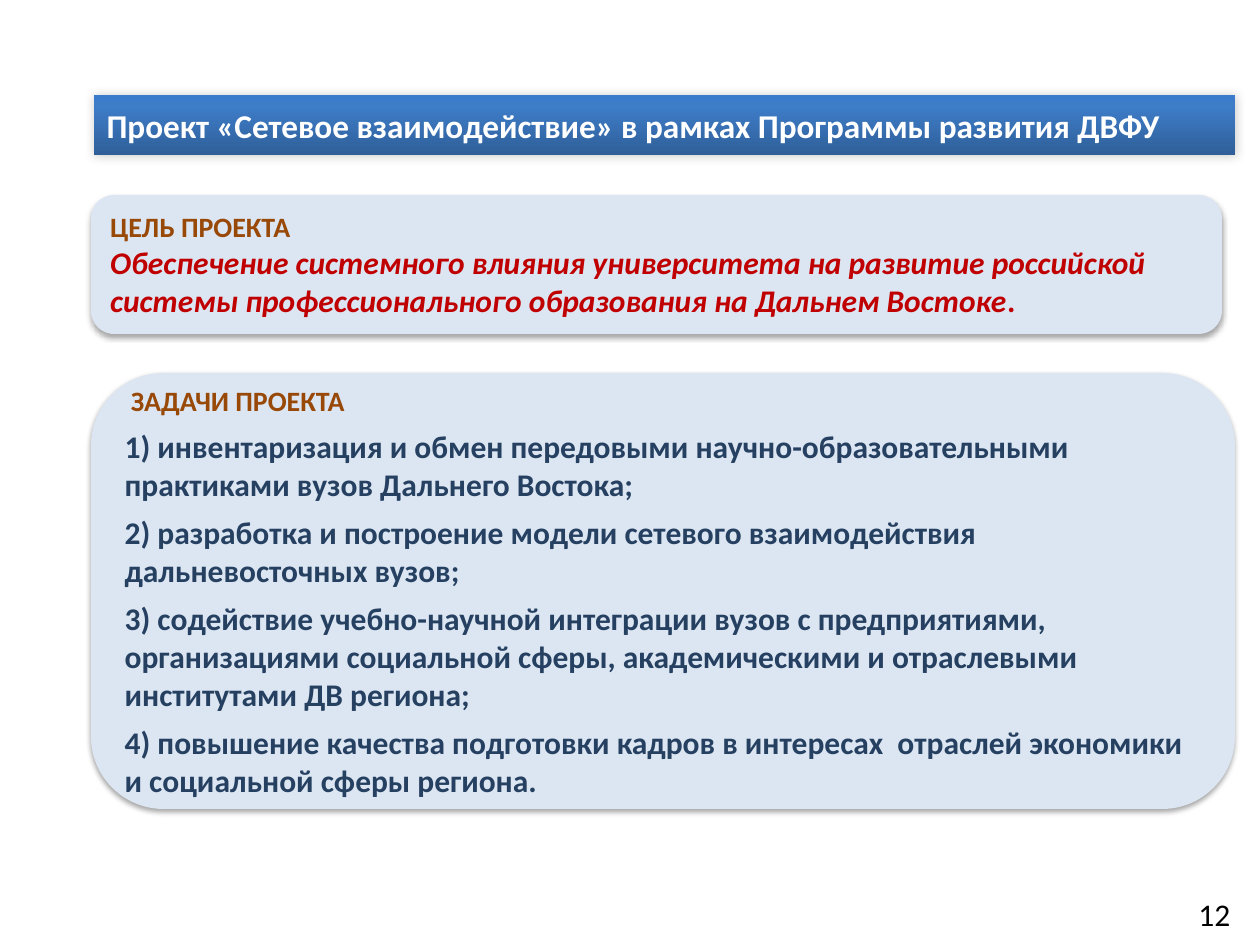
from copy import deepcopy

from lxml.etree import SubElement
from pptx import Presentation
from pptx.dml.color import RGBColor
from pptx.enum.shapes import MSO_SHAPE
from pptx.enum.text import MSO_ANCHOR, MSO_AUTO_SIZE, PP_ALIGN
from pptx.oxml.ns import qn
from pptx.util import Emu, Pt

PIXEL = 914400 / 126
FONT = "Calibri"
BLACK = RGBColor(0x00, 0x00, 0x00)
WHITE = RGBColor(0xFF, 0xFF, 0xFF)
PALE_BLUE = RGBColor(0xDC, 0xE6, 0xF2)
NAVY = RGBColor(0x25, 0x40, 0x61)
BROWN = RGBColor(0x98, 0x48, 0x07)
RED = RGBColor(0xC0, 0x00, 0x00)
BANNER_STOPS = [
    (0, RGBColor(0x2F, 0x5F, 0x99)),
    (0.8, RGBColor(0x3D, 0x7C, 0xC7)),
    (1, RGBColor(0x3A, 0x7C, 0xCB)),
]

TITLE = "Проект «Сетевое взаимодействие» в рамках Программы развития ДВФУ"
GOAL = (
    "Обеспечение системного влияния университета на развитие российской "
    "системы профессионального образования на Дальнем Востоке"
)
TASKS = [
    "1) инвентаризация и обмен передовыми научно-образовательными "
    "практиками вузов Дальнего Востока;",
    "2) разработка и построение модели сетевого взаимодействия "
    "дальневосточных вузов;",
    "3) содействие учебно-научной интеграции вузов с предприятиями, "
    "организациями социальной сферы, академическими и отраслевыми "
    "институтами ДВ региона;",
    "4) повышение качества подготовки кадров в интересах  отраслей экономики "
    "и социальной сферы региона.",
]


def px(value):
    return Emu(round(value * PIXEL))


def format_run(run, size, color, bold=True, italic=False):
    run.font.name = FONT
    run.font.size = Pt(size)
    run.font.color.rgb = color
    run.font.bold = bold
    run.font.italic = italic


def add_shadow(shape, opacity, blur, distance, angle):
    """Add a black outer shadow: percent, points, points, degrees."""
    shape.shadow.inherit = False
    effects = shape._element.spPr.find(qn("a:effectLst"))
    shadow = SubElement(
        effects, qn("a:outerShdw"), blurRad=str(Pt(blur)), dist=str(Pt(distance)),
        dir=str(angle * 60000), algn="ctr", rotWithShape="0",
    )
    color = SubElement(shadow, qn("a:srgbClr"), val=str(BLACK))
    SubElement(color, qn("a:alpha"), val=str(opacity * 1000))


def fill_banner(shape):
    shape.fill.gradient()
    shape.fill.gradient_angle = 90
    stop_list = next(shape._element.spPr.iter(qn("a:gsLst")))
    stop_list.append(deepcopy(stop_list[-1]))
    for stop, (position, color) in zip(shape.fill.gradient_stops, BANNER_STOPS):
        stop.position = position
        stop.color.rgb = color


def format_title(title):
    title.left, title.top, title.width, title.height = px(94), px(95), px(1141), px(60)
    fill_banner(title)
    add_shadow(title, 20, 6, 0, 315)
    frame = title.text_frame
    frame.text = TITLE
    frame.word_wrap = True
    frame.auto_size = MSO_AUTO_SIZE.NONE
    frame.vertical_anchor = MSO_ANCHOR.MIDDLE
    paragraph = frame.paragraphs[0]
    paragraph.alignment = PP_ALIGN.LEFT
    format_run(paragraph.runs[0], 19, WHITE)


def add_panel(slide, left, top, width, height):
    """Add a pale rounded panel and return its text frame."""
    panel = slide.shapes.add_shape(
        MSO_SHAPE.ROUNDED_RECTANGLE, px(left), px(top), px(width), px(height)
    )
    panel.fill.solid()
    panel.fill.fore_color.rgb = PALE_BLUE
    panel.line.fill.background()
    add_shadow(panel, 35, 3.1, 1.8, 90)
    panel.text_frame.word_wrap = True
    panel.text_frame.vertical_anchor = MSO_ANCHOR.MIDDLE
    return panel.text_frame


def write_paragraph(paragraph, text, size, color, space_after=6, italic=False):
    paragraph.text = text
    paragraph.alignment = PP_ALIGN.LEFT
    paragraph.space_after = Pt(space_after)
    format_run(paragraph.runs[0], size, color, italic=italic)


def add_goal(slide):
    frame = add_panel(slide, 91, 195, 1131, 139)
    write_paragraph(frame.paragraphs[0], "ЦЕЛЬ ПРОЕКТА", 16, BROWN, space_after=0)
    goal = frame.add_paragraph()
    write_paragraph(goal, GOAL, 18, RED, italic=True)
    full_stop = goal.add_run()
    full_stop.text = "."
    format_run(full_stop, 18, RED)


def add_tasks(slide):
    frame = add_panel(slide, 91, 373, 1144, 436)
    write_paragraph(frame.paragraphs[0], " ЗАДАЧИ ПРОЕКТА", 16, BROWN)
    for task in TASKS:
        write_paragraph(frame.add_paragraph(), task, 18, NAVY)


def add_page_number(slide):
    box = slide.shapes.add_textbox(px(1186), px(889), px(64), px(51))
    box.text_frame.text = "12"
    box.text_frame.word_wrap = True
    format_run(box.text_frame.paragraphs[0].runs[0], 18, BLACK, bold=False)


def main():
    presentation = Presentation()
    presentation.slide_width, presentation.slide_height = px(1260), px(945)
    slide = presentation.slides.add_slide(presentation.slide_layouts[5])
    format_title(slide.shapes.title)
    add_goal(slide)
    add_tasks(slide)
    add_page_number(slide)
    presentation.save("out.pptx")


if __name__ == "__main__":
    main()
